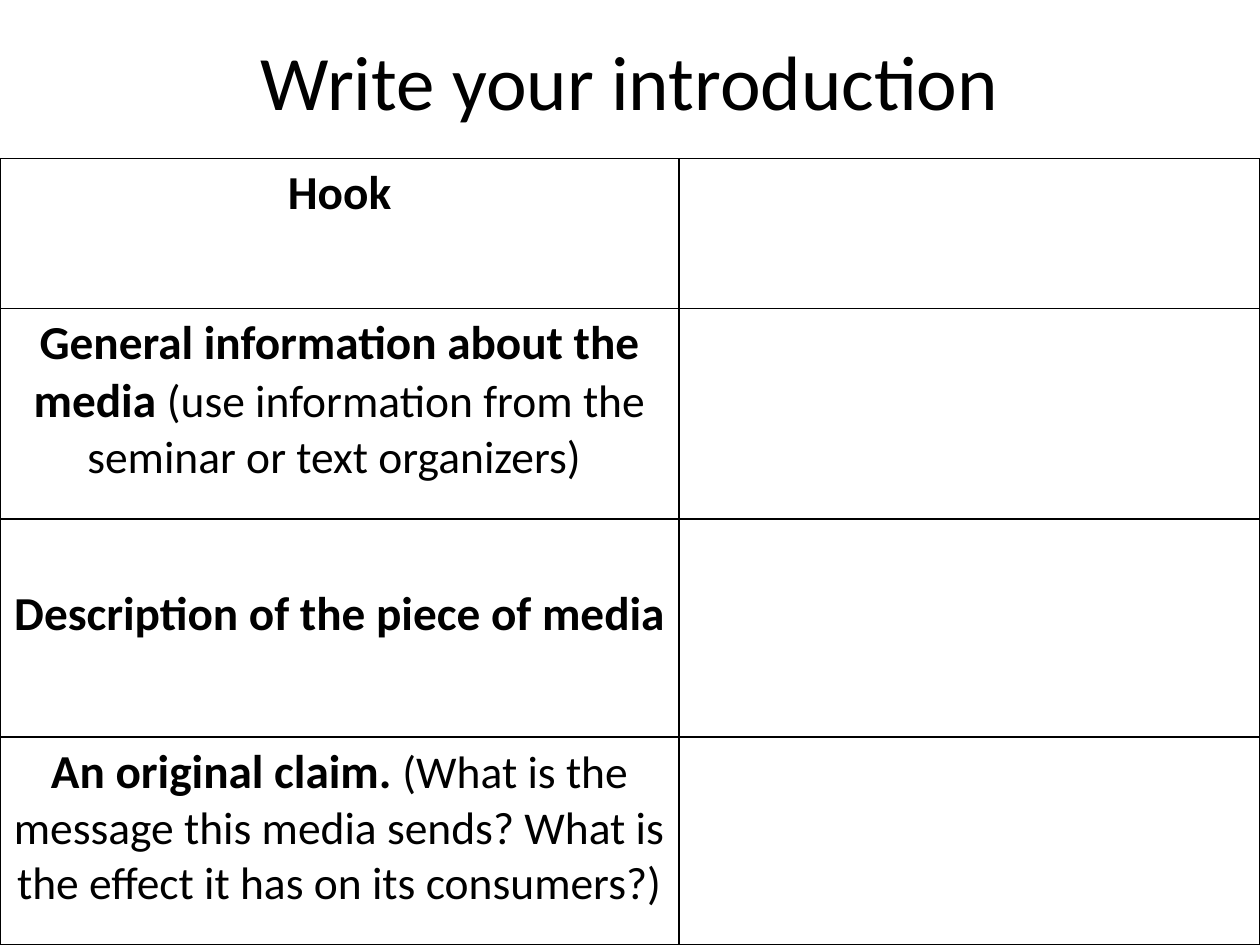
from lxml.etree import fromstring
from pptx import Presentation
from pptx.dml.color import RGBColor
from pptx.enum.text import MSO_ANCHOR, PP_ALIGN
from pptx.oxml.ns import nsdecls
from pptx.util import Inches, Pt

TITLE = "Write your introduction"
# Bold label, plain hint, row height, top margin
ROWS = [
    ("Hook", "", 1.19, 0.05),
    ("General information about the media ",
     "(use information from the seminar or text organizers) ", 1.67, 0.05),
    ("Description of the piece of media", "", 1.73, 0.53),
    ("An original claim. ",
     "(What is the message this media sends? "
     "What is the effect it has on its consumers?)", 1.65, 0.05),
]
COLS = [5.39, 4.61]
TOP = 1.26
INK, PAPER = "000000", "FFFFFF"


def color(code):
    return RGBColor.from_string(code)


def write(para, text, size=26, bold=False):
    para.alignment = PP_ALIGN.CENTER
    run = para.add_run()
    run.text = text
    font = run.font
    font.name, font.size, font.bold = "Calibri", Pt(size), bold
    font.color.rgb = color(INK)


def border(cell, width=1):
    props = cell._tc.get_or_add_tcPr()
    for i, side in enumerate("LRTB"):
        props.insert(i, fromstring(
            f'<a:ln{side} {nsdecls("a")} w="{Pt(width)}"><a:solidFill>'
            f'<a:srgbClr val="{INK}"/></a:solidFill></a:ln{side}>'))


prs = Presentation()
prs.slide_width, prs.slide_height = Inches(10), Inches(7.5)
slide = prs.slides.add_slide(prs.slide_layouts[6])

# Title
box = slide.shapes.add_textbox(Inches(0.5), Inches(0.01), Inches(9), Inches(1.25))
frame = box.text_frame
frame.word_wrap = True
frame.vertical_anchor = MSO_ANCHOR.MIDDLE
write(frame.paragraphs[0], TITLE, size=44)

# Table with prompts on the left and writing space on the right
high = sum(row[2] for row in ROWS)
table = slide.shapes.add_table(len(ROWS), len(COLS), 0, Inches(TOP),
                               Inches(sum(COLS)), Inches(high)).table
table.first_row = table.horz_banding = False
for col, width in zip(table.columns, COLS):
    col.width = Inches(width)
for row, (label, hint, height, margin) in zip(table.rows, ROWS):
    row.height = Inches(height)
    for cell in row.cells:
        cell.fill.solid()
        cell.fill.fore_color.rgb = color(PAPER)
        border(cell)
    prompt = row.cells[0]
    prompt.margin_top = Inches(margin)
    para = prompt.text_frame.paragraphs[0]
    write(para, label, size=27, bold=True)
    if hint:
        write(para, hint)

prs.save("out.pptx")
